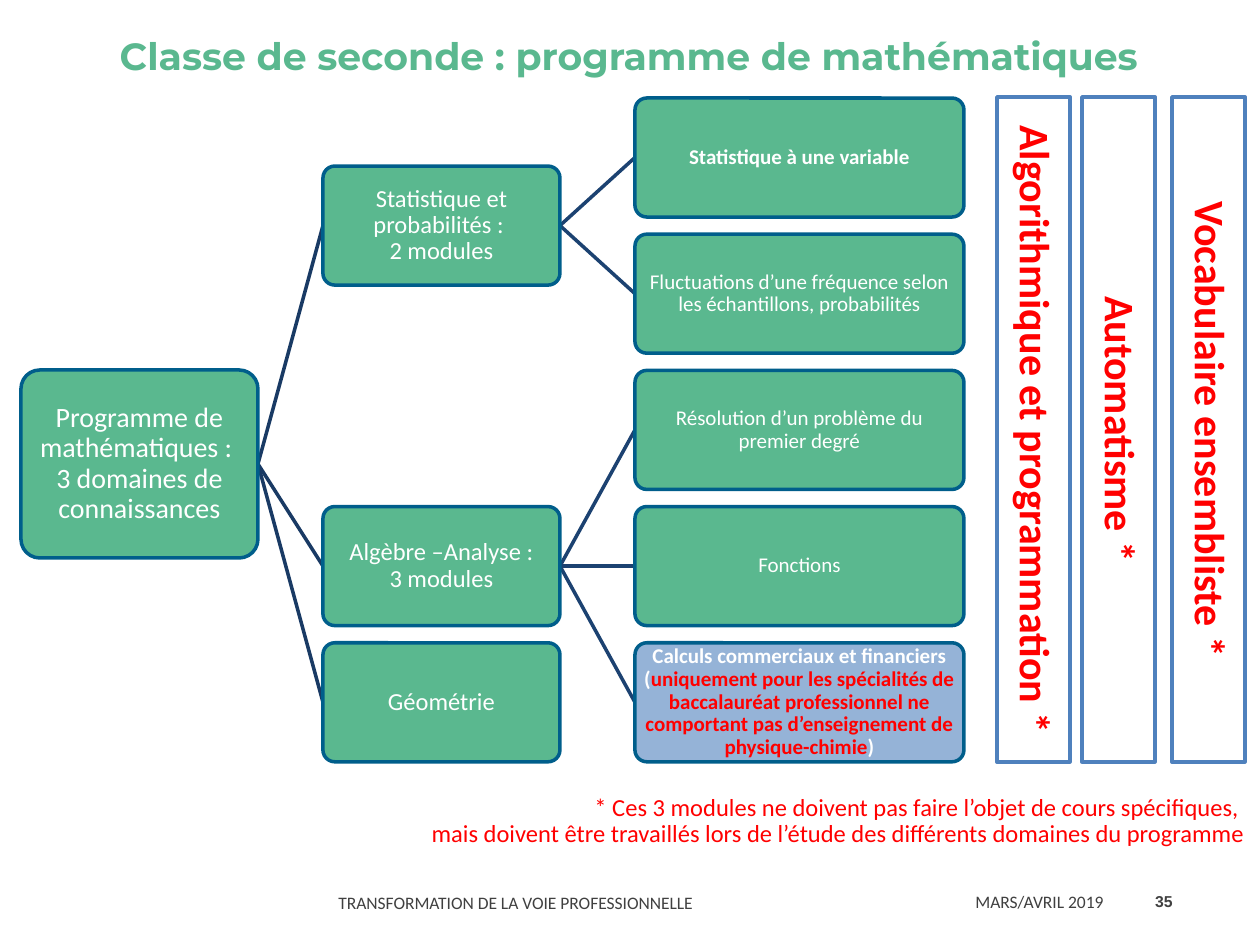
from lxml.etree import SubElement
from pptx import Presentation
from pptx.dml.color import RGBColor
from pptx.enum.shapes import MSO_CONNECTOR, MSO_SHAPE
from pptx.enum.text import MSO_ANCHOR, MSO_AUTO_SIZE, PP_ALIGN
from pptx.oxml.ns import qn
from pptx.util import Emu, Pt

COLORS = {
    "green": "5AB88F", "outline": "005E8B", "blue": "95B3D7",
    "trunk": "193A64", "branch": "1C4271", "panel_line": "4F81BD",
    "white": "FFFFFF", "red": "FF0000", "grey": "404040",
}


def px(length):
    return Emu(round(length * 914400 / 126))


def color(name):
    return RGBColor.from_string(COLORS[name])


class SlideBuilder:
    """Holds the shared style and the current slide."""

    font = "Calibri"
    line_width = Pt(2)
    inset = 5

    def __init__(self, slide):
        self.slide = slide

    def set_text(self, shape, runs, size, align=PP_ALIGN.CENTER, inset=None,
                 spacing=0.9, font=None):
        """Fill a shape with runs of (text, colour, bold)."""
        frame = shape.text_frame
        frame.word_wrap = True
        frame.auto_size = MSO_AUTO_SIZE.NONE
        frame.vertical_anchor = MSO_ANCHOR.MIDDLE
        if inset is not None:
            frame.margin_left = frame.margin_right = px(inset)
            frame.margin_top = frame.margin_bottom = px(inset)
        paragraph = frame.paragraphs[0]
        paragraph.alignment = align
        paragraph.line_spacing = spacing
        for text, color_name, bold in runs:
            for index, part in enumerate(text.split("\n")):
                if index:
                    paragraph.add_line_break()
                run = paragraph.add_run()
                run.text = part
                run.font.name = font or self.font
                run.font.size = Pt(size)
                run.font.bold = bold
                run.font.color.rgb = color(color_name)

    def title(self, box, text):
        shape = self.slide.shapes.title
        shape.left, shape.top, shape.width, shape.height = map(px, box)
        self.set_text(shape, [(text, "green", True)], 21.6, spacing=1.0,
                      font="Montserrat")

    def text(self, box, runs, size, **style):
        shape = self.slide.shapes.add_textbox(*map(px, box))
        self.set_text(shape, runs, size, **style)

    def box(self, preset, box, fill, line):
        shape = self.slide.shapes.add_shape(preset, *map(px, box))
        shape.shadow.inherit = False
        shape.fill.solid()
        shape.fill.fore_color.rgb = color(fill)
        shape.line.color.rgb = color(line)
        shape.line.width = self.line_width
        return shape

    def node(self, box, runs, size, fill="green"):
        shape = self.box(MSO_SHAPE.ROUNDED_RECTANGLE, box, fill, "outline")
        shape.adjustments[0] = 0.1
        self.set_text(shape, runs, size, inset=self.inset)

    def panel(self, box, text):
        shape = self.box(MSO_SHAPE.RECTANGLE, box, "white", "panel_line")
        self.set_text(shape, [(text, "red", True)], 24, inset=1)
        shape.element.txBody.bodyPr.set("vert", "vert")

    def link(self, parent, child, color_name):
        """Join the right side of parent to the left side of child."""
        left, top, width, height = parent
        line = self.slide.shapes.add_connector(
            MSO_CONNECTOR.STRAIGHT,
            px(left + width), px(top + height / 2),
            px(child[0]), px(child[1] + child[3] / 2))
        line.line.color.rgb = color(color_name)
        line.line.width = self.line_width
        SubElement(line.element.spPr, qn("a:effectLst"))


def white(text, bold=False):
    return [(text, "white", bold)]


# Tree content: domains with their row, modules with their domain
ROOT_TEXT = "Programme de mathématiques : \n3 domaines de connaissances"
DOMAINS = [
    (0.5, "Statistique et probabilités : \n2 modules"),
    (3, "Algèbre –Analyse :\n3 modules"),
    (4, "Géométrie"),
]
MODULES = [
    (0, white("Statistique à une variable", True), "green"),
    (0, white("Fluctuations d’une fréquence selon les échantillons, "
              "probabilités"), "green"),
    (1, white("Résolution d’un problème du premier degré"), "green"),
    (1, white("Fonctions"), "green"),
    (1, [("Calculs commerciaux et financiers (", "white", True),
         ("uniquement pour les spécialités de baccalauréat professionnel "
          "ne comportant pas d’enseignement de physique-chimie", "red", True),
         (")", "white", True)], "blue"),
]
PANELS = [
    (997, "Algorithmique et programmation *"),
    (1082, "Automatisme *"),
    (1172, "Vocabulaire ensembliste *"),
]
TOP, ROW_STEP, NODE_HEIGHT = 98, 136.2, 119


def row_box(left, width, row):
    return left, TOP + ROW_STEP * row, width, NODE_HEIGHT


def main():
    presentation = Presentation()
    presentation.slide_width, presentation.slide_height = px(1260), px(945)
    slide = presentation.slides.add_slide(presentation.slide_layouts[5])
    builder = SlideBuilder(slide)

    builder.title((30, 5, 1198, 100),
                  "Classe de seconde : programme de mathématiques")

    # Tree links, then nodes on top
    root = (21, 370, 237, 188)
    domains = [row_box(323, 237, row) for row, _ in DOMAINS]
    modules = [row_box(635, 329, row) for row in range(len(MODULES))]
    for domain in domains:
        builder.link(root, domain, "trunk")
    for module, (parent, _, _) in zip(modules, MODULES):
        builder.link(domains[parent], module, "branch")
    builder.node(root, white(ROOT_TEXT), 16)
    for domain, (_, text) in zip(domains, DOMAINS):
        builder.node(domain, white(text), 14)
    for module, (_, runs, fill) in zip(modules, MODULES):
        builder.node(module, runs, 12, fill)

    # Vertical panels and their footnote
    for left, text in PANELS:
        builder.panel((left, 97, 73, 665), text)
    builder.text(
        (382, 787, 864, 69),
        [("* Ces 3 modules ne doivent pas faire l’objet de cours spécifiques, \n"
          "mais doivent être travaillés lors de l’étude des différents "
          "domaines du programme", "red", False)],
        14, align=PP_ALIGN.RIGHT, inset=1)

    # Footer
    for box, text in [
        ((326, 875, 636, 53), "TRANSFORMATION DE LA VOIE PROFESSIONNELLE"),
        ((963, 876, 160, 50), "MARS/AVRIL 2019"),
    ]:
        builder.text(box, [(text, "grey", False)], 10, align=PP_ALIGN.LEFT,
                     spacing=Pt(13.2))
    builder.text((1123, 876, 62, 50), [("35", "grey", True)], 9,
                 align=PP_ALIGN.RIGHT, spacing=1.0, font="Arial")

    presentation.save("out.pptx")


if __name__ == "__main__":
    main()
